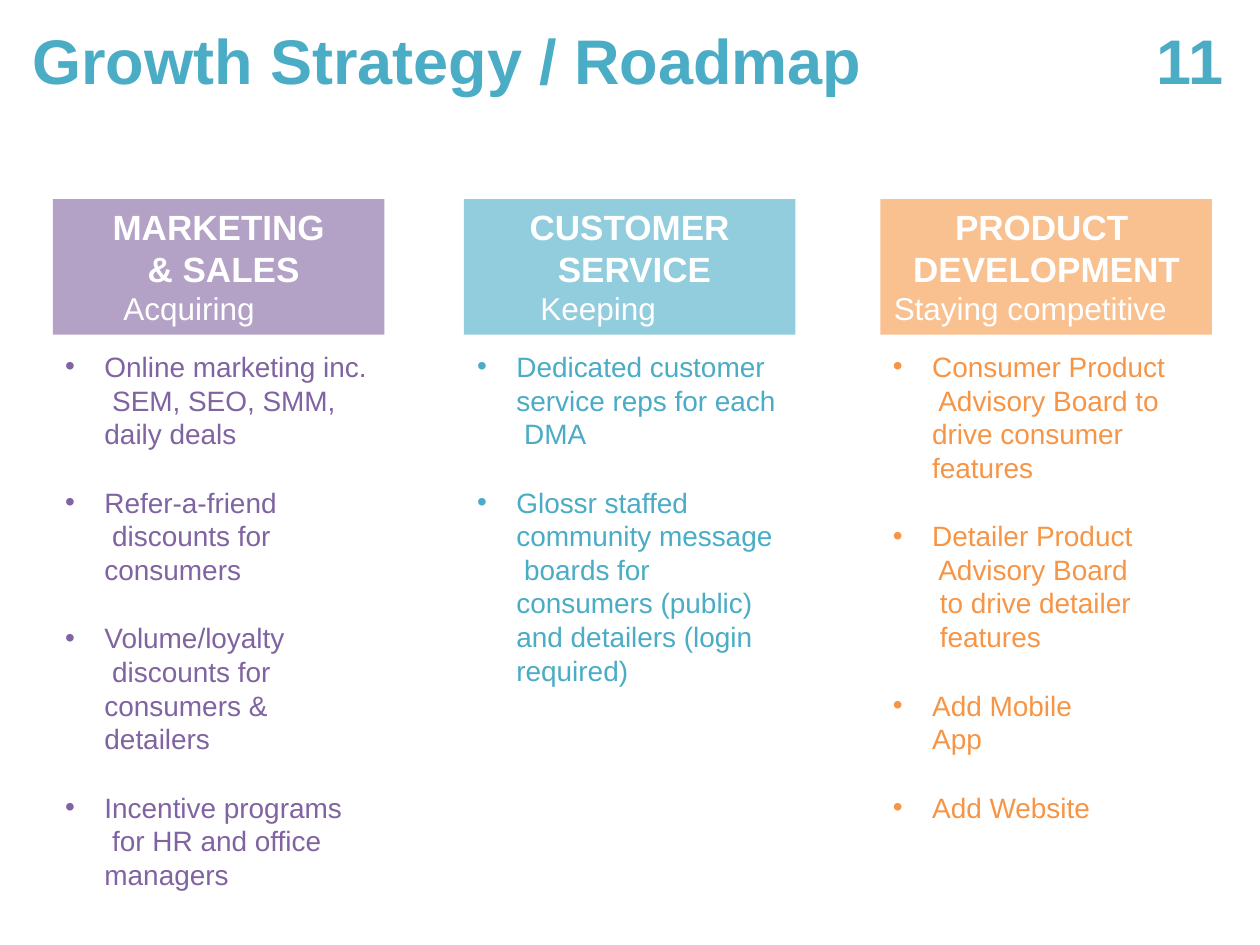
from dataclasses import dataclass
from lxml import etree
from pptx import Presentation
from pptx.dml.color import RGBColor
from pptx.enum.shapes import MSO_SHAPE
from pptx.enum.text import MSO_ANCHOR, MSO_AUTO_SIZE, PP_ALIGN
from pptx.oxml.ns import qn
from pptx.util import Pt

RECT = MSO_SHAPE.RECTANGLE
TOP = MSO_ANCHOR.TOP
FIXED = MSO_AUTO_SIZE.NONE
LEFT, CENTER = PP_ALIGN.LEFT, PP_ALIGN.CENTER


@dataclass
class Theme:
    font: str = "Arial"
    title: int = 36
    head: int = 20
    sub: int = 18
    item: int = 16
    white: str = "FFFFFF"
    teal: str = "4AACC5"
    purple: str = "8063A1"
    orange: str = "F79546"
    lilac: str = "B3A1C6"
    aqua: str = "92CDDD"
    peach: str = "F9C090"


theme = Theme()


def set_frame(shape, box, inset):
    shape.left, shape.top, shape.width, shape.height = [Pt(v) for v in box]
    frame = shape.text_frame
    frame.word_wrap = True
    frame.auto_size = FIXED
    frame.vertical_anchor = TOP
    frame.margin_left = frame.margin_right = frame.margin_bottom = 0
    frame.margin_top = Pt(inset)
    return frame


def style(para, size, color, bold=False, align=LEFT, before=0):
    para.alignment = align
    para.space_before = Pt(before)
    para.line_spacing = 1.0
    for run in para.runs:
        run.font.name = theme.font
        run.font.size = Pt(size)
        run.font.bold = bold
        run.font.color.rgb = RGBColor.from_string(color)


columns = [
    (30.24, 36, 175, theme.lilac, theme.purple, (0, 34),
     "MARKETING\v & SALES", "Acquiring",
     ["Online marketing inc.\v SEM, SEO, SMM,\vdaily deals",
      "Refer-a-friend\v discounts for\vconsumers",
      "Volume/loyalty\v discounts for\vconsumers &\vdetailers",
      "Incentive programs\v for HR and office\vmanagers"]),
    (265, 271.4, 180, theme.aqua, theme.teal, (0, 36),
     "CUSTOMER\v SERVICE", "Keeping",
     ["Dedicated customer\vservice reps for each\v DMA",
      "Glossr staffed\vcommunity message\v boards for\vconsumers (public)\vand detailers (login\vrequired)"]),
    (503, 509, 158, theme.peach, theme.orange, (5, 18),
     "PRODUCT\v DEVELOPMENT", "Staying competitive",
     ["Consumer Product\v Advisory Board to\vdrive consumer\vfeatures",
      "Detailer Product\v Advisory Board\v to drive detailer\v features",
      "Add Mobile\vApp",
      "Add Website"]),
]

deck = Presentation()
deck.slide_width, deck.slide_height = Pt(720), Pt(540)
slide = deck.slides.add_slide(deck.slide_layouts[4])
title, *bodies = slide.placeholders

number = slide.shapes.add_textbox(0, 0, 0, 0)
for shape, words, x, wide in ((title, "Growth Strategy / Roadmap", 18.5, 504),
                              (number, "11", 661, 45)):
    frame = set_frame(shape, (x, 11.5, wide, 45), 1)
    frame.text = words
    style(frame.paragraphs[0], theme.title, theme.teal, True)

for body, column in zip(bodies, columns):
    x, left, wide, fill, ink, pads, head, sub, items = column
    frame = set_frame(body, (left, 198.7, wide, 310), 1)
    frame.text = "\n".join(items)
    for i, para in enumerate(frame.paragraphs):
        para.text = items[i]
        style(para, theme.item, ink, before=20 if i else 0)
        props = para._p.get_or_add_pPr()
        props.set("marL", str(Pt(23.7)))
        props.set("indent", str(-Pt(22.5)))
        etree.SubElement(props, qn("a:buFont")).set("typeface", theme.font)
        etree.SubElement(props, qn("a:buChar")).set("char", "•")

    card = slide.shapes.add_shape(RECT, 0, 0, 0, 0)
    card.shadow.inherit = False
    card.fill.solid()
    card.fill.fore_color.rgb = RGBColor.from_string(fill)
    card.line.fill.background()
    frame = set_frame(card, (x, 113.8, 189.5, 77.5), 3.6)
    frame.text = head
    note = frame.add_paragraph()
    note.text = sub
    style(frame.paragraphs[0], theme.head, theme.white, True, CENTER, 2.5)
    style(note, theme.sub, theme.white, False, CENTER)
    for para, pad in zip(frame.paragraphs, pads):
        para._p.get_or_add_pPr().set("marR", str(Pt(pad)))

spare = bodies[-1]._element
spare.getparent().remove(spare)
deck.save("out.pptx")
